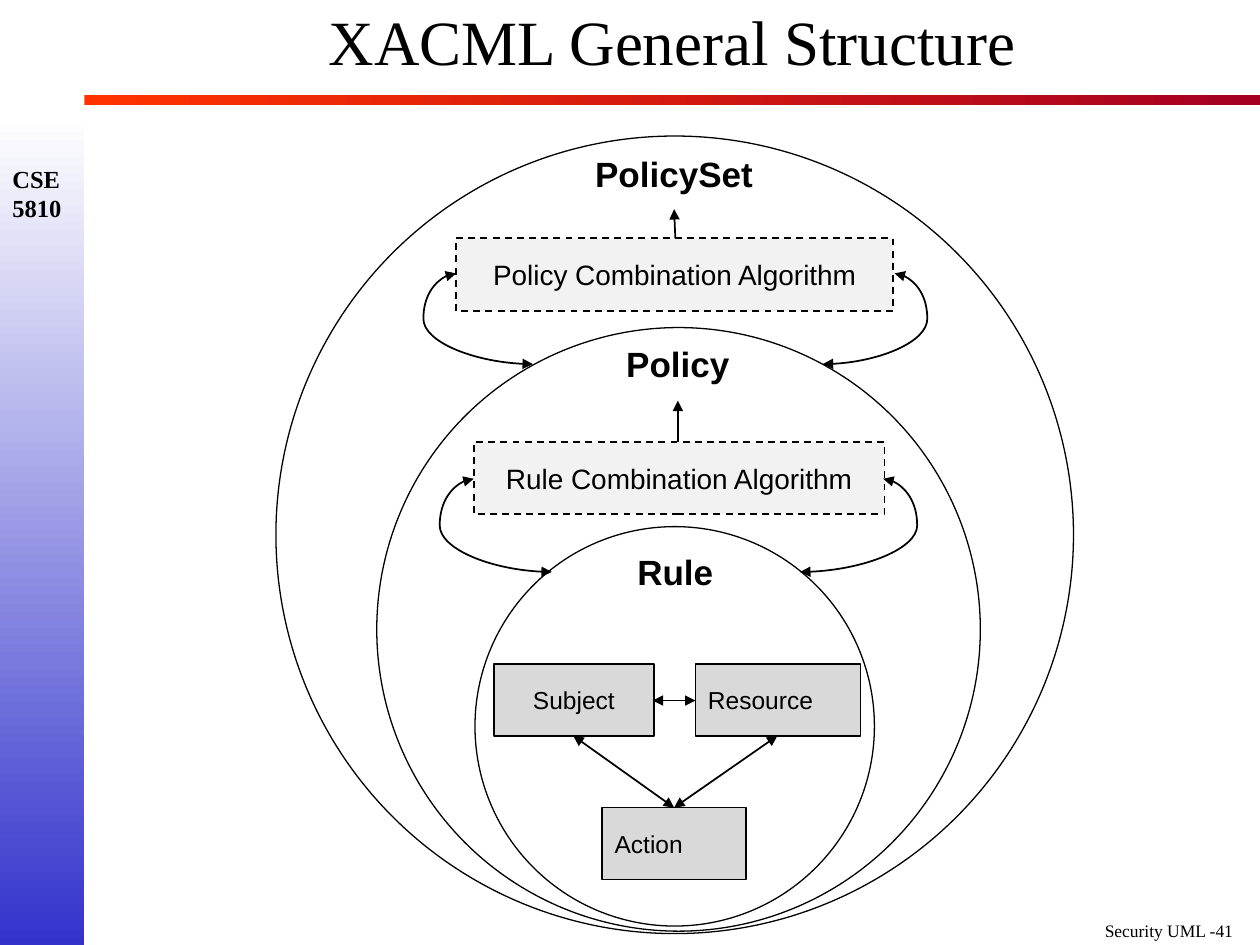
from dataclasses import dataclass

import pptx
import pptx.dml.color
import pptx.enum.dml
import pptx.enum.shapes
import pptx.enum.text
import pptx.oxml
import pptx.oxml.ns
import pptx.util
from pptx.util import Inches

ALIGN = pptx.enum.text.PP_ALIGN
ANCHOR = pptx.enum.text.MSO_ANCHOR
SHAPE = pptx.enum.shapes.MSO_SHAPE
CONNECTOR = pptx.enum.shapes.MSO_CONNECTOR


@dataclass(frozen=True)
class Theme:
    ink: str = "000000"
    entity_fill: str = "D9D9D9"
    algorithm_fill: str = "F2F2F2"
    sidebar: tuple = ("FFFFFF", "3333CC")
    rule_bar: tuple = ("FF3300", "A50021")
    serif: str = "Times New Roman"
    sans: str = "Arial"
    title_size: int = 36
    level_size: int = 20
    algorithm_size: int = 16
    body_size: int = 14
    footer_size: int = 10
    thin: float = 0.75
    line: float = 1


THEME = Theme()


@dataclass(frozen=True)
class Box:
    left: float
    top: float
    width: float
    height: float

    def lengths(self) -> tuple:
        return tuple(Inches(v) for v in (self.left, self.top, self.width, self.height))


@dataclass(frozen=True)
class Style:
    size: int
    font: str = THEME.sans
    bold: bool = False
    align: ALIGN = ALIGN.CENTER
    anchor: ANCHOR = ANCHOR.MIDDLE
    line_spacing: float = 1.0


@dataclass(frozen=True)
class Block:
    text: str
    box: Box
    fill: str
    style: Style
    dashed: bool = False


@dataclass(frozen=True)
class Arrow:
    start: tuple
    end: tuple
    both: bool = True
    bend: float | None = None  # x of the outermost point of a curved arrow


def rgb(value: str) -> pptx.dml.color.RGBColor:
    return pptx.dml.color.RGBColor.from_string(value)


def write(shape, text: str, style: Style) -> None:
    frame = shape.text_frame
    frame.word_wrap = True
    frame.vertical_anchor = style.anchor
    for index, line in enumerate(text.split("\n")):
        paragraph = frame.add_paragraph() if index else frame.paragraphs[0]
        paragraph.alignment = style.align
        paragraph.line_spacing = style.line_spacing
        run = paragraph.add_run()
        run.text = line
        run.font.name = style.font
        run.font.size = pptx.util.Pt(style.size)
        run.font.bold = style.bold
        run.font.color.rgb = rgb(THEME.ink)


def add_label(slide, text: str, box: Box, style: Style) -> None:
    write(slide.shapes.add_textbox(*box.lengths()), text, style)


def set_line(line, width: float) -> None:
    line.color.rgb = rgb(THEME.ink)
    line.width = pptx.util.Pt(width)


def add_gradient_bar(slide, box: Box, colors: tuple, angle: int) -> None:
    shape = slide.shapes.add_shape(SHAPE.RECTANGLE, *box.lengths())
    shape.shadow.inherit = False
    shape.line.fill.background()
    shape.fill.gradient()
    shape.fill.gradient_angle = angle
    for stop, color in zip(shape.fill.gradient_stops, colors):
        stop.color.rgb = rgb(color)


def add_circle(slide, left: float, top: float, diameter: float) -> None:
    box = Box(left, top, diameter, diameter)
    shape = slide.shapes.add_shape(SHAPE.OVAL, *box.lengths())
    shape.shadow.inherit = False
    shape.fill.background()
    set_line(shape.line, THEME.thin)


def add_block(slide, block: Block) -> None:
    shape = slide.shapes.add_shape(SHAPE.RECTANGLE, *block.box.lengths())
    shape.shadow.inherit = False
    shape.fill.solid()
    shape.fill.fore_color.rgb = rgb(block.fill)
    set_line(shape.line, THEME.line)
    if block.dashed:
        shape.line.dash_style = pptx.enum.dml.MSO_LINE.DASH
    write(shape, block.text, block.style)


def add_arrow(slide, arrow: Arrow) -> None:
    kind = CONNECTOR.STRAIGHT if arrow.bend is None else CONNECTOR.CURVE
    points = (Inches(v) for v in arrow.start + arrow.end)
    connector = slide.shapes.add_connector(kind, *points)
    set_line(connector.line, THEME.line)
    properties = connector._element.spPr
    qn = pptx.oxml.ns.qn
    if arrow.bend is not None:
        share = (arrow.bend - arrow.start[0]) / (arrow.end[0] - arrow.start[0])
        values = properties.find(qn("a:prstGeom")).get_or_add_avLst()
        guide = values.makeelement(qn("a:gd"), {"name": "adj1", "fmla": f"val {round(share * 100000)}"})
        values.append(guide)
    line = properties.find(qn("a:ln"))
    for end in ("a:headEnd", "a:tailEnd") if arrow.both else ("a:tailEnd",):
        line.append(line.makeelement(qn(end), {"type": "triangle"}))
    properties.append(properties.makeelement(qn("a:effectLst"), {}))


LEVEL = Style(THEME.level_size, bold=True)
ALGORITHM = Style(THEME.algorithm_size)
ENTITY = Style(THEME.body_size)
ENTITY_LEFT = Style(THEME.body_size, align=ALIGN.LEFT)

CIRCLES = [(2.19, 1.08, 6.33), (2.99, 2.6, 4.79), (3.77, 4.18, 3.17)]
LEVELS = [
    ("PolicySet", Box(4.1, 1.09, 2.5, 0.57)),
    ("Policy", Box(4.23, 2.6, 2.3, 0.57)),
    ("Rule", Box(4.38, 4.25, 1.96, 0.57)),
]
BLOCKS = [
    Block("Subject", Box(3.92, 5.27, 1.27, 0.57), THEME.entity_fill, ENTITY),
    Block("Action", Box(4.78, 6.41, 1.14, 0.57), THEME.entity_fill, ENTITY_LEFT),
    Block("Resource", Box(5.52, 5.27, 1.31, 0.57), THEME.entity_fill, ENTITY_LEFT),
    Block("Rule Combination Algorithm", Box(3.76, 3.51, 3.26, 0.57), THEME.algorithm_fill, ALGORITHM, True),
    Block("Policy Combination Algorithm", Box(3.62, 1.89, 3.47, 0.58), THEME.algorithm_fill, ALGORITHM, True),
]
ARROWS = [
    Arrow((4.55, 5.84), (5.35, 6.41)),
    Arrow((5.35, 6.41), (6.17, 5.84)),
    Arrow((5.18, 5.56), (5.52, 5.56)),
    Arrow((4.38, 4.54), (3.76, 3.8), bend=3.49),
    Arrow((6.35, 4.54), (7.01, 3.8), bend=7.28),
    Arrow((4.23, 2.89), (3.62, 2.17), bend=3.36),
    Arrow((6.53, 2.89), (7.1, 2.17), bend=7.36),
    Arrow((5.36, 1.89), (5.35, 1.66), both=False),
    Arrow((5.38, 3.51), (5.38, 3.18), both=False),
]


def add_frame(slide) -> None:
    """Draw the sidebar, the bar under the title, and the texts around the diagram."""
    corner = {"font": THEME.serif, "align": ALIGN.LEFT, "anchor": ANCHOR.TOP}
    add_gradient_bar(slide, Box(0, 0.92, 0.67, 6.58), THEME.sidebar, 270)
    add_label(slide, "Security UML -41", Box(8.67, 7.25, 1.33, 0.26), Style(THEME.footer_size, **corner))
    add_gradient_bar(slide, Box(0.67, 0.75, 9.33, 0.08), THEME.rule_bar, 0)
    add_label(slide, "CSE\n5810", Box(0, 1.25, 0.67, 0.57), Style(THEME.body_size, bold=True, **corner))
    title = Style(THEME.title_size, THEME.serif, line_spacing=0.8)
    add_label(slide, "XACML General Structure", Box(0.67, 0, 9.33, 0.75), title)


def main() -> None:
    presentation = pptx.Presentation()
    presentation.slide_width, presentation.slide_height = Inches(10), Inches(7.5)
    slide = presentation.slides.add_slide(presentation.slide_layouts[6])
    add_frame(slide)
    for circle in CIRCLES:
        add_circle(slide, *circle)
    for text, box in LEVELS:
        add_label(slide, text, box, LEVEL)
    for block in BLOCKS:
        add_block(slide, block)
    for arrow in ARROWS:
        add_arrow(slide, arrow)
    presentation.save("out.pptx")


if __name__ == "__main__":
    main()
